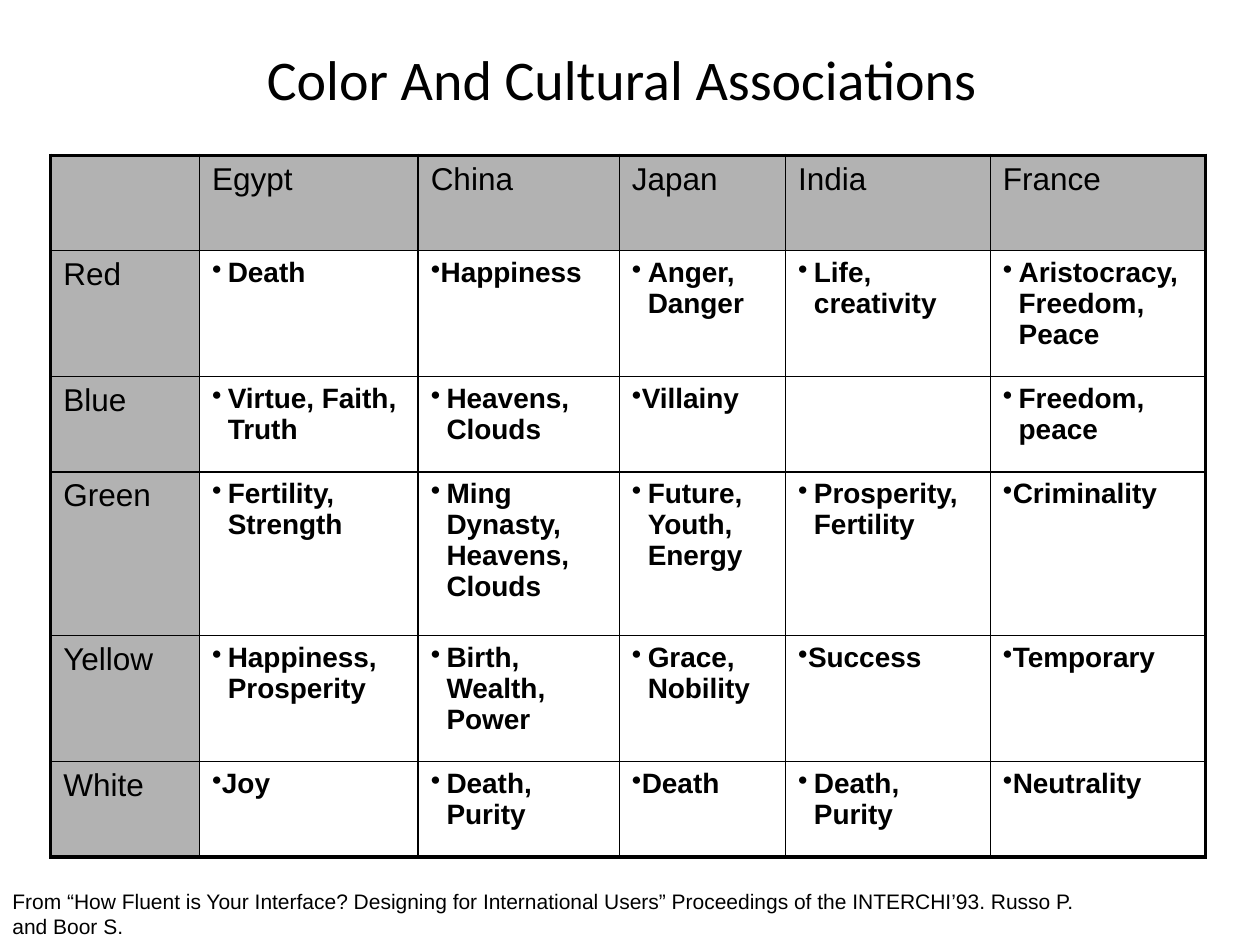
from dataclasses import dataclass

from lxml import etree
from pptx import Presentation
from pptx import util as u
from pptx.dml.color import RGBColor
from pptx.enum import text
from pptx.oxml import ns


@dataclass(frozen=True)
class Theme:
    ink: str = "000000"
    heading_fill: str = "B2B2B2"
    title_font: str = "Calibri"
    body_font: str = "Arial"
    title_size: float = 32
    heading_size: float = 18
    entry_size: float = 16
    source_size: float = 12
    outer_line: float = 2.25
    inner_line: float = 1
    bullet_indent: float = 9


THEME = Theme()

TITLE = "Color And Cultural Associations"
SOURCE = (
    "From “How Fluent is Your Interface? Designing for International Users” "
    "Proceedings of the INTERCHI’93. Russo P. and Boor S."
)
COLUMN_WIDTHS = (85, 125, 115, 95, 117, 123)
ROW_HEIGHTS = (54.5, 72, 54.5, 93.5, 72, 54.5)
ASSOCIATIONS = (
    ("", "Egypt", "China", "Japan", "India", "France"),
    ("Red", "Death", "Happiness", "Anger, Danger", "Life, creativity",
     "Aristocracy, Freedom, Peace"),
    ("Blue", "Virtue, Faith, Truth", "Heavens, Clouds", "Villainy", "",
     "Freedom, peace"),
    ("Green", "Fertility, Strength", "Ming Dynasty, Heavens, Clouds",
     "Future, Youth, Energy", "Prosperity, Fertility", "Criminality"),
    ("Yellow", "Happiness, Prosperity", "Birth, Wealth, Power",
     "Grace, Nobility", "Success", "Temporary"),
    ("White", "Joy", "Death, Purity", "Death", "Death, Purity", "Neutrality"),
)
HANGING_SINGLE_WORDS = {(1, 1)}


def apply_format(target, values):
    for name, value in values.items():
        setattr(target, name, value)


def add_element(parent, tag, **attributes):
    return etree.SubElement(parent, ns.qn(tag), attributes)


def write_text(frame, content, font, size, bold=False, space_before=0):
    paragraph = frame.paragraphs[0]
    if space_before:
        spacing = add_element(paragraph._p.get_or_add_pPr(), "a:spcBef")
        add_element(spacing, "a:spcPct", val=str(space_before * 1000))
    run = paragraph.add_run()
    run.text = content
    apply_format(run.font, {"name": font, "size": u.Pt(size), "bold": bold})
    run.font.color.rgb = RGBColor.from_string(THEME.ink)
    return paragraph


def add_bullet(paragraph, hanging):
    properties = paragraph._p.get_or_add_pPr()
    indent = u.Pt(THEME.bullet_indent) if hanging else 0
    properties.set("marL", str(indent))
    properties.set("indent", str(-indent))
    add_element(properties, "a:buChar", char="•")


def set_borders(cell, outer_sides):
    properties = cell._tc.get_or_add_tcPr()
    for side in "LRTB":
        width = THEME.outer_line if side in outer_sides else THEME.inner_line
        line = add_element(properties, f"a:ln{side}", w=str(u.Pt(width)))
        fill = add_element(line, "a:solidFill")
        add_element(fill, "a:srgbClr", val=THEME.ink)


def fill_cell(cell, row, column, content):
    edges = {
        "L": column == 0,
        "R": column == len(COLUMN_WIDTHS) - 1,
        "T": row == 0,
        "B": row == len(ROW_HEIGHTS) - 1,
    }
    set_borders(cell, [side for side, outer in edges.items() if outer])
    heading = row == 0 or column == 0
    if heading:
        cell.fill.solid()
        cell.fill.fore_color.rgb = RGBColor.from_string(THEME.heading_fill)
    else:
        cell.fill.background()
    if not content:
        return
    size = THEME.heading_size if heading else THEME.entry_size
    paragraph = write_text(cell.text_frame, content, THEME.body_font, size,
                           bold=not heading, space_before=30)
    if not heading:
        add_bullet(paragraph, " " in content or (row, column) in HANGING_SINGLE_WORDS)


def add_text_box(slide, box, frame_format):
    frame = slide.shapes.add_textbox(*map(u.Pt, box)).text_frame
    apply_format(frame, {"word_wrap": True, **frame_format})
    return frame


def add_title(slide, box):
    frame = add_text_box(slide, box, {"vertical_anchor": text.MSO_ANCHOR.MIDDLE})
    paragraph = write_text(frame, TITLE, THEME.title_font, THEME.title_size)
    paragraph.alignment = text.PP_ALIGN.CENTER


def add_associations(slide, box):
    shape = slide.shapes.add_table(len(ROW_HEIGHTS), len(COLUMN_WIDTHS), *map(u.Pt, box))
    table = shape.table
    apply_format(table, {"first_row": False, "horz_banding": False})
    for column, width in zip(table.columns, COLUMN_WIDTHS):
        column.width = u.Pt(width)
    for row, height in zip(table.rows, ROW_HEIGHTS):
        row.height = u.Pt(height)
    for row, entries in enumerate(ASSOCIATIONS):
        for column, content in enumerate(entries):
            fill_cell(table.cell(row, column), row, column, content)


def add_source(slide, box):
    frame = add_text_box(slide, box, {"auto_size": text.MSO_AUTO_SIZE.SHAPE_TO_FIT_TEXT})
    write_text(frame, SOURCE, THEME.body_font, THEME.source_size, space_before=50)


def main():
    presentation = Presentation()
    apply_format(presentation, {"slide_width": u.Pt(720), "slide_height": u.Pt(540)})
    slide = presentation.slides.add_slide(presentation.slide_layouts[6])
    add_title(slide, (34, 24, 643, 41))
    add_associations(slide, (29, 88.75, sum(COLUMN_WIDTHS), sum(ROW_HEIGHTS)))
    add_source(slide, (0, 504, 644, 36))
    presentation.save("out.pptx")


if __name__ == "__main__":
    main()
